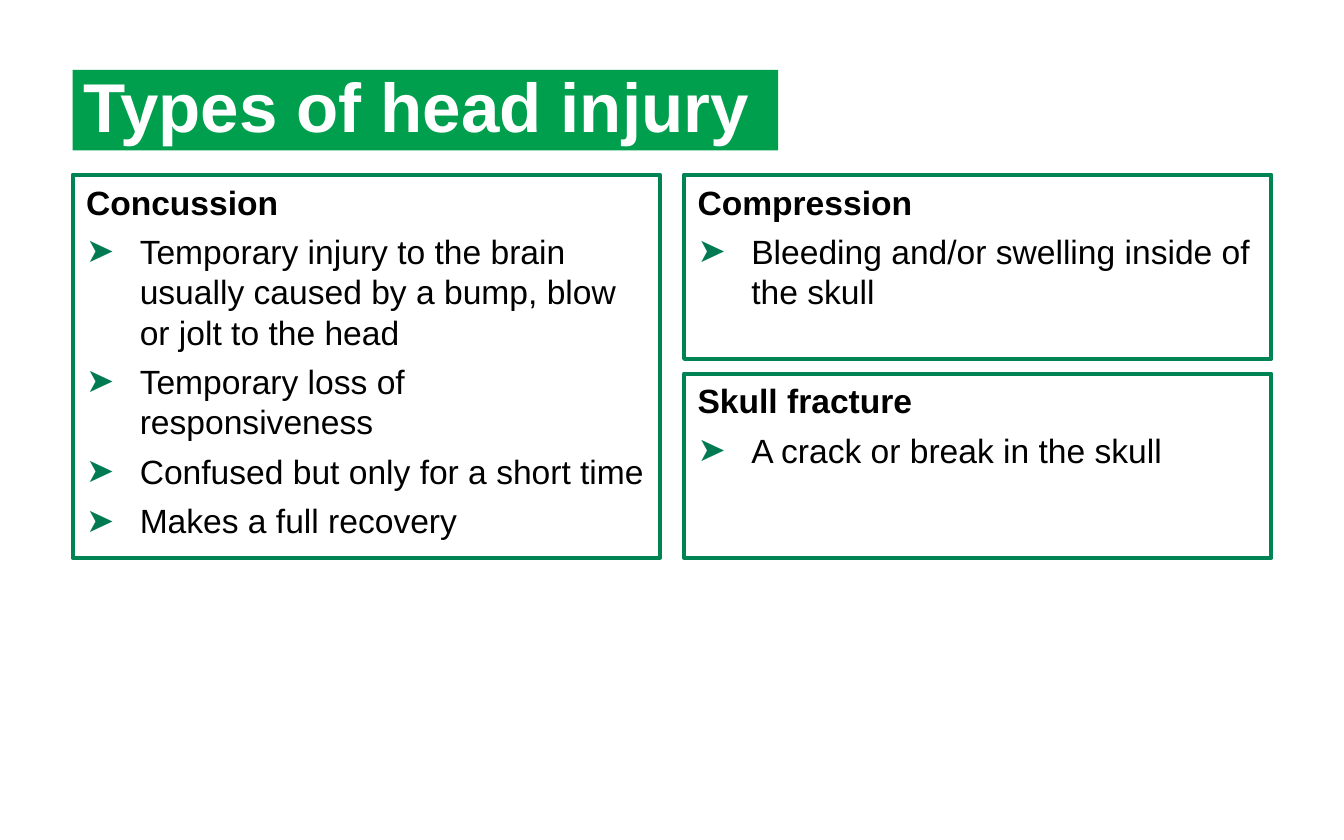
import lxml.etree
import pptx
import pptx.dml.color
import pptx.enum.text
import pptx.oxml.ns
import pptx.util

Inches = pptx.util.Inches
Pt = pptx.util.Pt

FONT = "Arial"
MARGIN = 0.54
COLUMN_GAP = 0.18
ROW_GAP = 0.11
CARDS_TOP = 1.3
CARDS_HEIGHT = 2.85
SLIDE_WIDTH = 10
SLIDE_HEIGHT = 6.25

CONCUSSION = [
    "Temporary injury to the brain usually caused by a bump, blow or jolt to the head",
    "Temporary loss of responsiveness",
    "Confused but only for a short time",
    "Makes a full recovery",
]
COMPRESSION = ["Bleeding and/or swelling inside of the skull"]
SKULL_FRACTURE = ["A crack or break in the skull"]


def rgb(code):
    """Return the colour of a hex string."""
    return pptx.dml.color.RGBColor.from_string(code)


def place(part, box):
    """Move a placeholder to a box of left, top, width and height in inches."""
    part.left, part.top, part.width, part.height = (Inches(length) for length in box)


def add_bullet(paragraph, symbol, color):
    """Give a paragraph a hanging bullet, or none when the symbol is empty."""
    properties = paragraph._p.get_or_add_pPr()
    indent = Inches(0.4) if symbol else 0
    properties.set("marL", str(indent))
    properties.set("indent", str(-indent))
    qn = pptx.oxml.ns.qn
    if not symbol:
        lxml.etree.SubElement(properties, qn("a:buNone"))
        return
    bullet_color = lxml.etree.SubElement(properties, qn("a:buClr"))
    lxml.etree.SubElement(bullet_color, qn("a:srgbClr"), val=color)
    lxml.etree.SubElement(properties, qn("a:buFont"), typeface=FONT)
    lxml.etree.SubElement(properties, qn("a:buChar"), char=symbol)


def format_paragraph(paragraph, size, color, bold, space_after):
    """Align a paragraph left and set its spacing and the font of its runs."""
    paragraph.alignment = pptx.enum.text.PP_ALIGN.LEFT
    paragraph.space_before = Pt(0)
    paragraph.space_after = Pt(space_after)
    for run in paragraph.runs:
        run.font.name = FONT
        run.font.size = Pt(size)
        run.font.bold = bold
        run.font.color.rgb = rgb(color)


def build_title(title, box, wording):
    """Turn the title placeholder into the green banner."""
    place(title, box)
    title.fill.solid()
    title.fill.fore_color.rgb = rgb("009F4D")
    frame = title.text_frame
    frame.text = wording
    frame.word_wrap = True
    frame.auto_size = pptx.enum.text.MSO_AUTO_SIZE.NONE
    frame.vertical_anchor = pptx.enum.text.MSO_ANCHOR.MIDDLE
    frame.margin_left = frame.margin_right = Inches(0.08)
    frame.margin_top = frame.margin_bottom = Inches(0.04)
    frame.paragraphs[0].line_spacing = 0.9
    format_paragraph(frame.paragraphs[0], 37, "FFFFFF", True, 4.1)


def build_card(card, box, heading, points):
    """Turn a body placeholder into an outlined card with a heading and bullets."""
    place(card, box)
    card.line.color.rgb = rgb("008453")
    card.line.width = Pt(2.25)
    frame = card.text_frame
    frame.text = "\n".join([heading] + points)
    frame.word_wrap = True
    frame.auto_size = pptx.enum.text.MSO_AUTO_SIZE.NONE
    frame.vertical_anchor = pptx.enum.text.MSO_ANCHOR.TOP
    for index, paragraph in enumerate(frame.paragraphs):
        add_bullet(paragraph, "➤" if index else "", "007A53")
        format_paragraph(paragraph, 18, "000000", index == 0, 4.9)


def build_injury_slide(presentation):
    """Add the slide with its banner, one tall card and two stacked cards."""
    slide = presentation.slides.add_slide(presentation.slide_layouts.get_by_name("Comparison"))
    build_title(slide.shapes.title, (MARGIN, 0.52, 5.25, 0.6), "Types of head injury")

    width = (SLIDE_WIDTH - 2 * MARGIN - COLUMN_GAP) / 2
    half_height = (CARDS_HEIGHT - ROW_GAP) / 2
    right = MARGIN + width + COLUMN_GAP
    lower = CARDS_TOP + half_height + ROW_GAP
    cards = [
        ((MARGIN, CARDS_TOP, width, CARDS_HEIGHT), "Concussion", CONCUSSION),
        ((right, CARDS_TOP, width, half_height), "Compression", COMPRESSION),
        ((right, lower, width, half_height), "Skull fracture", SKULL_FRACTURE),
    ]
    bodies = [body for body in slide.placeholders if body.placeholder_format.idx in range(1, 5)]
    for body, card in zip(bodies, cards):
        build_card(body, *card)
    for unused in bodies[len(cards):]:
        unused._element.getparent().remove(unused._element)


def main():
    """Build and save the presentation."""
    presentation = pptx.Presentation()
    presentation.slide_width = Inches(SLIDE_WIDTH)
    presentation.slide_height = Inches(SLIDE_HEIGHT)
    build_injury_slide(presentation)
    presentation.save("out.pptx")


if __name__ == "__main__":
    main()
